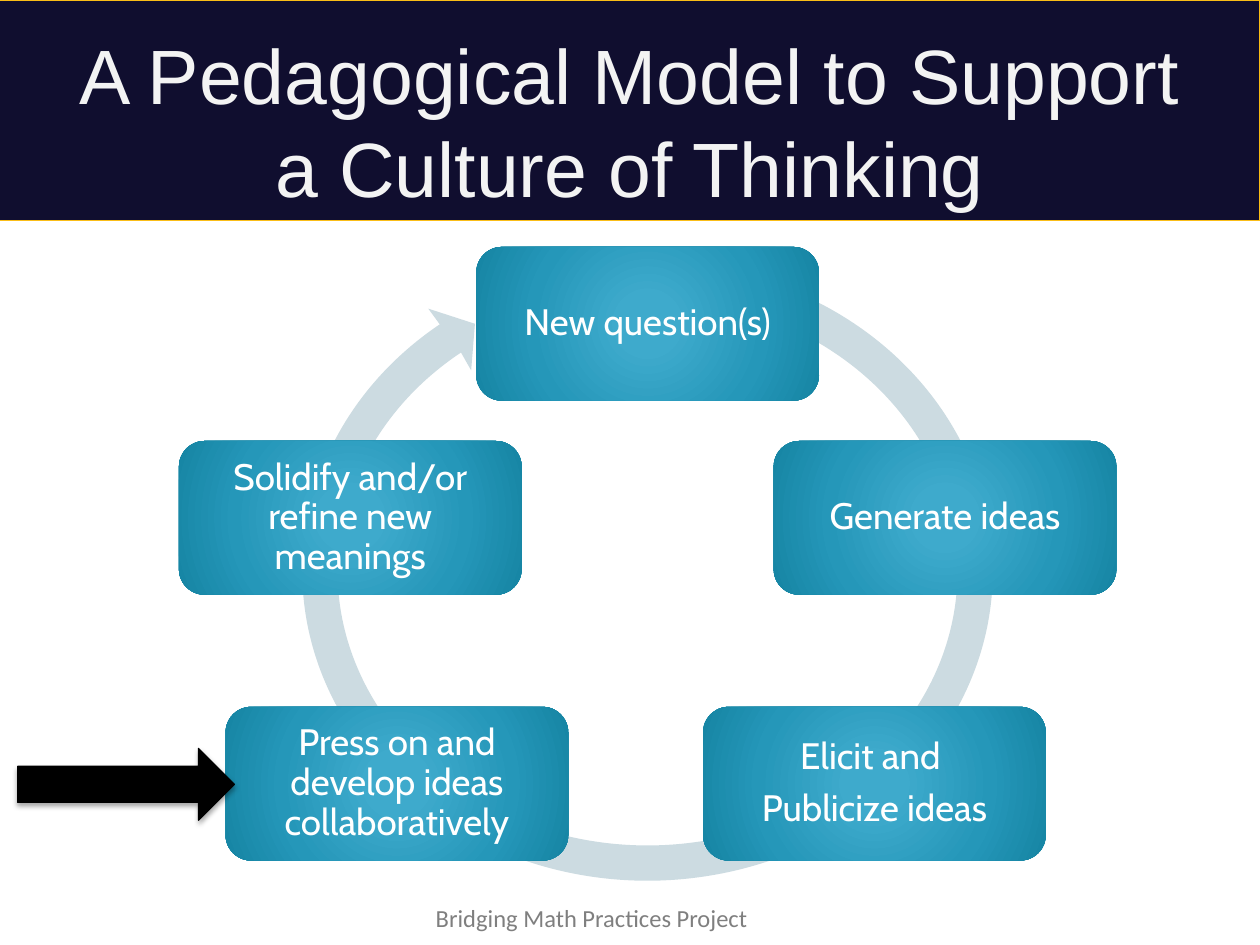
from math import cos, radians, sin, tan

from lxml import etree
from pptx import Presentation
from pptx.dml.color import RGBColor
from pptx.enum.shapes import MSO_SHAPE
from pptx.enum.text import MSO_ANCHOR, PP_ALIGN
from pptx.oxml import parse_xml
from pptx.oxml.ns import nsdecls, qn
from pptx.util import Inches, Pt

NAVY = RGBColor(0x10, 0x0E, 0x2F)
GOLD = RGBColor(0xFA, 0xBD, 0x17)
OFF_WHITE = RGBColor(0xF3, 0xF3, 0xF3)
WHITE = RGBColor(0xFF, 0xFF, 0xFF)
BLACK = RGBColor(0, 0, 0)
GRAY = RGBColor(0x7F, 0x7F, 0x7F)
RING = RGBColor(0xCC, 0xDB, 0xE1)
NODE_STOPS = [
    (0, RGBColor(0x3F, 0xAB, 0xCD)),
    (15, RGBColor(0x3E, 0xAA, 0xCC)),
    (62, RGBColor(0x25, 0x97, 0xB9)),
    (97, RGBColor(0x17, 0x86, 0xA5)),
    (100, RGBColor(0x09, 0x85, 0xA6)),
]

TITLE_FONT = {"name": "Arial", "size": Pt(44), "color": OFF_WHITE}
NODE_FONT = {"name": "Cabin", "size": Pt(21), "color": WHITE}
FOOTER_FONT = {"name": "Calibri", "size": Pt(14), "color": GRAY}

# Steps of the cycle: offset from the top step, then paragraphs
STEPS = [
    (0, 0, ["New question(s)"]),
    (2.36, 1.54, ["Generate ideas"]),
    (1.8, 3.65, ["Elicit and ", "Publicize ideas"]),
    (-1.99, 3.65, ["Press on and develop ideas collaboratively"]),
    (-2.36, 1.54, ["Solidify and/or refine new meanings"]),
]


def inches(box):
    return [Inches(value) for value in box]


def write_text(shape, paragraphs, font, inset, alignment, **paragraph_format):
    frame = shape.text_frame
    frame.word_wrap = True
    for side, margin in zip(("left", "top", "right", "bottom"), inset):
        setattr(frame, f"margin_{side}", Inches(margin))
    frame.text = "\n".join(paragraphs)
    for index, paragraph in enumerate(frame.paragraphs):
        paragraph.alignment = alignment
        for name, value in paragraph_format.items():
            if name != "space_before" or index:
                setattr(paragraph, name, value)
        run_font = paragraph.runs[0].font
        for name, value in font.items():
            if name == "color":
                run_font.color.rgb = value
            else:
                setattr(run_font, name, value)
    return frame


def add_filled_shape(slide, kind, box, fill, line):
    shape = slide.shapes.add_shape(kind, *inches(box))
    shape.shadow.inherit = False
    shape.fill.solid()
    shape.fill.fore_color.rgb = fill
    shape.line.color.rgb = line
    shape.line.width = Pt(0.75)
    return shape


def add_header(slide, box, text):
    left, top, width, height = box
    band = add_filled_shape(slide, MSO_SHAPE.RECTANGLE, box, NAVY, GOLD)
    title = slide.shapes.title
    title._element.addprevious(band._element)
    title.left, title.top, title.width, title.height = inches(
        (left + 0.54, top + 0.33, width - 1.04, height - 0.5))
    frame = write_text(title, [text], TITLE_FONT, [0.1] * 4, PP_ALIGN.CENTER)
    frame.vertical_anchor = MSO_ANCHOR.MIDDLE


def arc_points(center, radii, start, end, curves=4):
    """Return the start point and three Bézier points for each curve of an arc."""
    step = radians(end - start) / curves
    reach = 4 / 3 * tan(step / 4)

    def place(angle, pull):
        x = cos(angle) - pull * sin(angle)
        y = sin(angle) + pull * cos(angle)
        return Inches(center[0] + radii[0] * x), Inches(center[1] + radii[1] * y)

    points = [place(radians(start), 0)]
    for index in range(curves):
        angle = radians(start) + index * step
        points += [place(angle, reach), place(angle + step, -reach), place(angle + step, 0)]
    return points


def merge_into_curves(lines):
    """Turn each three line segments into one Bézier curve."""
    for first, second, third in zip(lines[::3], lines[1::3], lines[2::3]):
        first.tag = qn("a:cubicBezTo")
        for line in (second, third):
            first.append(line[0])
            line.getparent().remove(line)


def add_ring(slide, box, thickness):
    """Draw an elliptical band that runs clockwise and ends in an arrowhead."""
    left, top, width, height = box
    center = left + width / 2, top + height / 2
    outer = arc_points(center, (width / 2, height / 2), -72, 233)
    inner = arc_points(center, (width / 2 - thickness, height / 2 - thickness), 233, -72)
    head = [inches(point) for point in ((3.4, 2.45), (3.77, 2.57), (3.74, 2.94))]
    builder = slide.shapes.build_freeform(*outer[0])
    builder.add_line_segments(outer[1:] + head + inner, close=True)
    ring = builder.convert_to_shape()
    lines = list(ring._element.iter(qn("a:lnTo")))
    merge_into_curves(lines[:len(outer) - 1])
    merge_into_curves(lines[len(outer) + len(head):])
    ring.shadow.inherit = False
    ring.fill.solid()
    ring.fill.fore_color.rgb = RING
    ring.line.fill.background()


def fill_radial(shape, stops):
    stop_xml = "".join(
        f'<a:gs pos="{position * 1000}"><a:srgbClr val="{color}"/></a:gs>'
        for position, color in stops)
    gradient = parse_xml(
        f'<a:gradFill {nsdecls("a")} rotWithShape="1"><a:gsLst>{stop_xml}</a:gsLst>'
        '<a:path path="circle"><a:fillToRect l="50000" t="50000" r="50000" b="50000"/>'
        '</a:path></a:gradFill>')
    shape._element.spPr.find(qn("a:prstGeom")).addnext(gradient)


def add_step(slide, box, paragraphs):
    step = slide.shapes.add_shape(MSO_SHAPE.ROUNDED_RECTANGLE, *inches(box))
    step.shadow.inherit = False
    step.line.fill.background()
    fill_radial(step, NODE_STOPS)
    frame = write_text(step, paragraphs, NODE_FONT, [0.09] * 4, PP_ALIGN.CENTER,
                       line_spacing=0.9, space_before=Pt(7.3))
    frame.vertical_anchor = MSO_ANCHOR.MIDDLE


def add_cycle(slide, box):
    left, top, width, height = box
    add_ring(slide, (left + 0.98, top + 0.12, width - 1.96, height - 0.12), 0.28)
    step_width, step_height = 2.72, 1.22
    first_left = left + (width - step_width) / 2
    for offset_x, offset_y, paragraphs in STEPS:
        add_step(slide, (first_left + offset_x, top + offset_y, step_width, step_height),
                 paragraphs)


def add_pointer(slide, box):
    arrow = add_filled_shape(slide, MSO_SHAPE.RIGHT_ARROW, box, BLACK, BLACK)
    effects = arrow._element.spPr.find(qn("a:effectLst"))
    shadow = etree.SubElement(effects, qn("a:outerShdw"), blurRad=str(Pt(3.1)),
                              dist=str(Pt(1.8)), dir="5400000", rotWithShape="0")
    color = etree.SubElement(shadow, qn("a:srgbClr"), val=str(BLACK))
    etree.SubElement(color, qn("a:alpha"), val="35000")


def add_footer(slide, box, text):
    footer = slide.shapes.add_textbox(*inches(box))
    write_text(footer, [text], FOOTER_FONT, (0.1, 0.05, 0.1, 0.05), PP_ALIGN.LEFT)


def main():
    presentation = Presentation()
    presentation.slide_width, presentation.slide_height = Inches(10), Inches(7.5)
    slide = presentation.slides.add_slide(presentation.slide_layouts[5])
    add_header(slide, (-0.04, 0, 10.04, 1.75),
               "A Pedagogical Model to Support a Culture of Thinking")
    add_footer(slide, (3.36, 7.12, 2.95, 0.34), "Bridging Math Practices Project")
    add_cycle(slide, (1.42, 1.96, 7.44, 5.03))
    add_pointer(slide, (0.14, 5.94, 1.72, 0.57))
    presentation.save("out.pptx")


if __name__ == "__main__":
    main()
